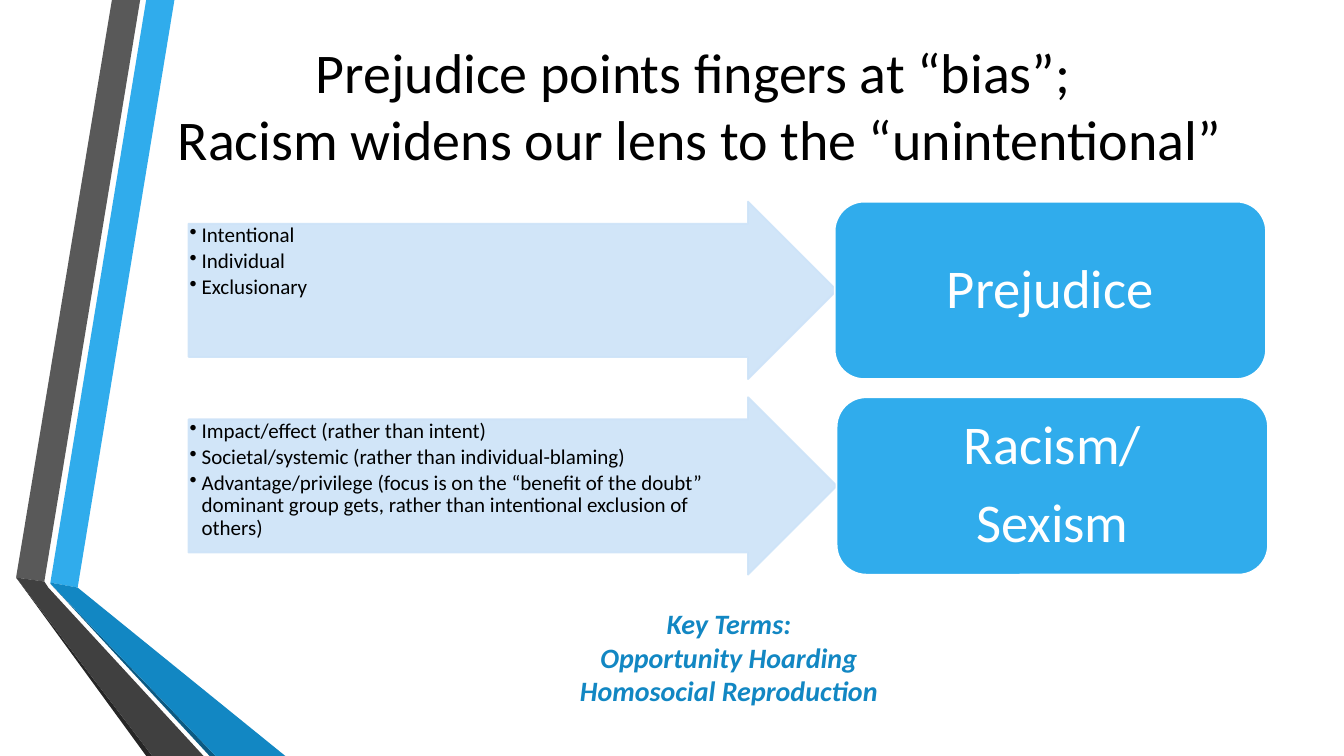
"""Build the slide that contrasts prejudice with racism and sexism."""
from dataclasses import dataclass

from lxml.etree import SubElement
from pptx import Presentation
from pptx.dml.color import RGBColor
from pptx.enum.shapes import MSO_SHAPE as Preset
from pptx.enum.text import MSO_ANCHOR as Anchor, PP_ALIGN as Align
from pptx.oxml.ns import qn
from pptx.util import Inches, Pt

BLACK = RGBColor(0x00, 0x00, 0x00)
WHITE = RGBColor(0xFF, 0xFF, 0xFF)
SKY = RGBColor(0x30, 0xAC, 0xEC)
BLUE = RGBColor(0x12, 0x87, 0xC3)
NAVY = RGBColor(0x0C, 0x5A, 0x82)
PALE = RGBColor(0xCD, 0xE3, 0xF8)
GREY = RGBColor(0x59, 0x59, 0x59)
CHARCOAL = RGBColor(0x40, 0x40, 0x40)
SOOT = RGBColor(0x26, 0x26, 0x26)

SLIDE_W, SLIDE_H = Inches(13.333), Inches(7.5)


@dataclass(frozen=True)
class Ribbon:
    color: RGBColor
    corners: tuple[tuple[float, float], ...]


@dataclass(frozen=True)
class Area:
    left: float
    top: float
    width: float
    height: float

    def emu(self) -> tuple[int, int, int, int]:
        return across(self.left), down(self.top), across(self.width), down(self.height)


@dataclass(frozen=True)
class Style:
    size: float
    color: RGBColor
    align: Align = Align.CENTER
    emphasis: bool = False
    spacing: float = 1.0
    after: float = 0.0
    bulleted: bool = False


@dataclass(frozen=True)
class Concept:
    label: tuple[str, ...]
    traits: tuple[str, ...]
    label_left: float


RIBBONS = (
    Ribbon(SKY, ((3.75, 77.07), (5.78, 77.73), (12.98, 0), (10.88, 0))),
    Ribbon(GREY, ((10.43, 0), (8.33, 0), (1.2, 76.4), (3.3, 76.93))),
    Ribbon(SOOT, ((1.2, 76.4), (10.88, 100), (11.33, 100))),
    Ribbon(NAVY, ((3.75, 77.2), (15.6, 100), (16.05, 100))),
    Ribbon(BLUE, ((3.75, 77.2), (16.05, 100), (21.23, 100), (5.78, 77.73), (3.75, 77.07))),
    Ribbon(CHARCOAL, ((15.15, 100), (3.6, 77.73), (3.3, 76.93), (1.2, 76.4), (11.33, 100))),
)
TITLE = ("Prejudice points fingers at “bias”; ", "Racism widens our lens to the “unintentional”")
CONCEPTS = (
    Concept(("Prejudice",), ("Intentional", "Individual", "Exclusionary"), 62.1),
    Concept(
        ("Racism/", "Sexism"),
        (
            "Impact/effect (rather than intent)",
            "Societal/systemic (rather than individual-blaming)",
            "Advantage/privilege (focus is on the “benefit of the doubt” dominant group gets, "
            "rather than intentional exclusion of others)",
        ),
        62.25,
    ),
)
KEY_TERMS = ("Key Terms:", "Opportunity Hoarding", "Homosocial Reproduction")

TITLE_AREA = Area(10.95, 1.07, 82.2, 25.6)
KEY_TERMS_AREA = Area(32.48, 79.6, 43.5, 14.8)
ARROW_LEFT, ARROW_W, LABEL_W = 14.03, 48.23, 32.1
ROW_TOP, ROW_STEP, ROW_H = 26.67, 25.87, 23.47

TITLE_STYLE = Style(40, BLACK)
TRAIT_STYLE = Style(15, BLACK, Align.LEFT, spacing=0.9, after=2.25, bulleted=True)
LABEL_STYLE = Style(39, WHITE, spacing=0.9, after=13.65)
KEY_STYLE = Style(20, BLUE, emphasis=True)


def across(percent: float) -> int:
    return round(SLIDE_W * percent / 100)


def down(percent: float) -> int:
    return round(SLIDE_H * percent / 100)


def style_paragraph(paragraph, style: Style) -> None:
    paragraph.alignment = style.align
    paragraph.line_spacing = style.spacing
    paragraph.space_after = Pt(style.after)
    if style.bulleted:
        properties = paragraph._p.get_or_add_pPr()
        properties.set("marL", str(Inches(0.12)))
        properties.set("indent", str(-Inches(0.12)))
        SubElement(properties, qn("a:buChar"), char="•")


def add_text(paragraph, text: str, style: Style) -> None:
    run = paragraph.add_run()
    run.text = text
    font = run.font
    font.name, font.size, font.color.rgb = "Calibri", Pt(style.size), style.color
    font.bold = font.italic = style.emphasis


def write(frame, lines: tuple[str, ...], style: Style, anchor: Anchor) -> None:
    frame.word_wrap = True
    frame.vertical_anchor = anchor
    for index, line in enumerate(lines):
        paragraph = frame.add_paragraph() if index else frame.paragraphs[0]
        style_paragraph(paragraph, style)
        add_text(paragraph, line, style)


def set_margins(frame, left: float, top: float, right: float, bottom: float) -> None:
    frame.margin_left, frame.margin_top = Inches(left), Inches(top)
    frame.margin_right, frame.margin_bottom = Inches(right), Inches(bottom)


def draw_ribbon(shapes, ribbon: Ribbon) -> None:
    start, *rest = [(across(x), down(y)) for x, y in ribbon.corners]
    builder = shapes.build_freeform(*start, scale=1.0)
    builder.add_line_segments(rest, close=True)
    band = builder.convert_to_shape()
    band.shadow.inherit = False
    band.fill.solid()
    band.fill.fore_color.rgb = ribbon.color
    band.line.fill.background()


def draw_preset(shapes, preset: Preset, area: Area, fill: RGBColor, line: RGBColor):
    shape = shapes.add_shape(preset, *area.emu())
    shape.shadow.inherit = False
    shape.fill.solid()
    shape.fill.fore_color.rgb = fill
    shape.line.color.rgb = line
    shape.line.width = Pt(1.25)
    return shape


def draw_concept(shapes, concept: Concept, top: float) -> None:
    arrow = draw_preset(shapes, Preset.RIGHT_ARROW, Area(ARROW_LEFT, top, ARROW_W, ROW_H), PALE, PALE)
    arrow.adjustments[0], arrow.adjustments[1] = 0.75, 0.5
    for color in arrow._element.spPr.iter(qn("a:srgbClr")):
        SubElement(color, qn("a:alpha"), val="90000")
    set_margins(arrow.text_frame, 0.01, 0.01, 0.45, 0.01)
    write(arrow.text_frame, concept.traits, TRAIT_STYLE, Anchor.TOP)

    label_area = Area(concept.label_left, top, LABEL_W, ROW_H)
    label = draw_preset(shapes, Preset.ROUNDED_RECTANGLE, label_area, SKY, WHITE)
    set_margins(label.text_frame, 0.16, 0.08, 0.16, 0.08)
    write(label.text_frame, concept.label, LABEL_STYLE, Anchor.MIDDLE)


def draw_title(shapes) -> None:
    frame = shapes.add_textbox(*TITLE_AREA.emu()).text_frame
    write(frame, TITLE[:1], TITLE_STYLE, Anchor.MIDDLE)
    heading = frame.paragraphs[0]
    heading.add_line_break()
    add_text(heading, TITLE[1], TITLE_STYLE)


def main() -> None:
    deck = Presentation()
    deck.slide_width, deck.slide_height = SLIDE_W, SLIDE_H
    shapes = deck.slides.add_slide(deck.slide_layouts[6]).shapes
    for ribbon in RIBBONS:
        draw_ribbon(shapes, ribbon)
    draw_title(shapes)
    for row, concept in enumerate(CONCEPTS):
        draw_concept(shapes, concept, ROW_TOP + row * ROW_STEP)
    key_terms = shapes.add_textbox(*KEY_TERMS_AREA.emu())
    write(key_terms.text_frame, KEY_TERMS, KEY_STYLE, Anchor.TOP)
    deck.save("out.pptx")


if __name__ == "__main__":
    main()
